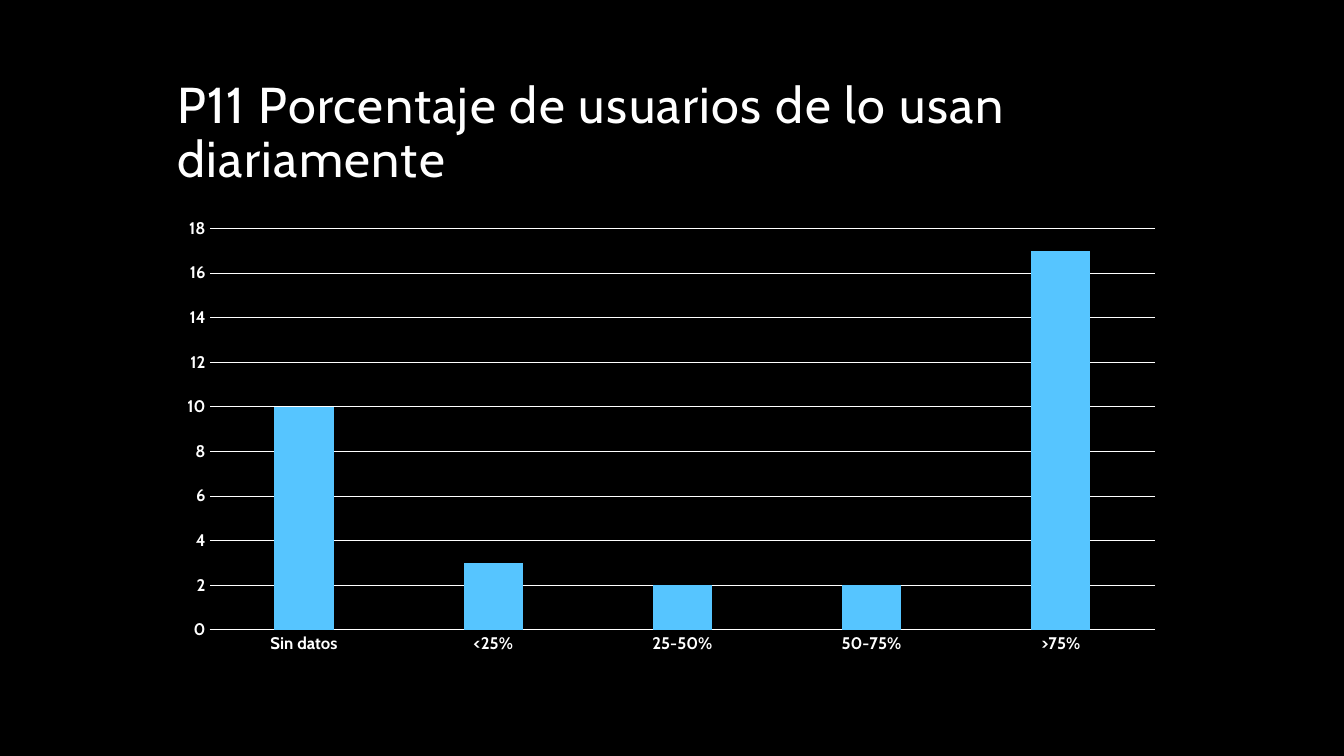
import pptx
import pptx.chart.data
import pptx.dml.color
import pptx.enum.chart
import pptx.enum.text
import pptx.util

WIDE, HIGH = pptx.util.Inches(13.33), pptx.util.Inches(7.5)
FACE = "Cabin"
COLORS = {"back": "000000", "text": "FFFFFF", "bar": "56C5FF"}
USAGE = {"Sin datos": 10, "<25%": 3, "25-50%": 2, "50-75%": 2, ">75%": 17}


def tint(name):
    return pptx.dml.color.RGBColor.from_string(COLORS[name])


def paint(fill, name):
    fill.solid()
    fill.fore_color.rgb = tint(name)


def style(font, size, bold=False):
    font.name = FACE
    font.size = pptx.util.Pt(size)
    font.bold = bold
    font.color.rgb = tint("text")


def rule(line):
    line.color.rgb = tint("text")
    line.width = pptx.util.Pt(0.75)


def place(left, top, width, height):
    return (int(left * WIDE), int(top * HIGH),
            int(width * WIDE), int(height * HIGH))


def add_title(slide, box):
    frame = slide.shapes.add_textbox(*box).text_frame
    frame.word_wrap = True
    frame.vertical_anchor = pptx.enum.text.MSO_ANCHOR.BOTTOM
    frame.text = "P11 Porcentaje de usuarios de lo usan diariamente"
    line = frame.paragraphs[0]
    line.line_spacing = 0.9
    run = line.runs[0]
    style(run.font, 36)
    run._r.get_or_add_rPr().set("spc", "100")


def add_bars(slide, box):
    data = pptx.chart.data.CategoryChartData(number_format="0")
    data.categories = list(USAGE)
    data.add_series("Series 1", list(USAGE.values()))
    kind = pptx.enum.chart.XL_CHART_TYPE.COLUMN_CLUSTERED
    chart = slide.shapes.add_chart(kind, *box, data).chart
    style(chart.font, 10)
    chart.has_title = False
    chart.has_legend = False

    plot = chart.plots[0]
    plot.gap_width = 219
    plot.overlap = -27
    plot.vary_by_categories = False
    paint(plot.series[0].format.fill, "bar")

    for axis in (chart.category_axis, chart.value_axis):
        style(axis.tick_labels.font, 12, bold=True)
        axis.major_tick_mark = pptx.enum.chart.XL_TICK_MARK.NONE
        axis.minor_tick_mark = pptx.enum.chart.XL_TICK_MARK.NONE
    rule(chart.category_axis.format.line)

    scale = chart.value_axis
    scale.minimum_scale, scale.maximum_scale, scale.major_unit = 0, 18, 2
    scale.tick_labels.number_format = "0"
    scale.tick_labels.number_format_is_linked = False
    scale.format.line.fill.background()
    scale.has_major_gridlines = True
    rule(scale.major_gridlines.format.line)


def main():
    deck = pptx.Presentation()
    deck.slide_width, deck.slide_height = WIDE, HIGH
    slide = deck.slides.add_slide(deck.slide_layouts[6])
    paint(slide.background.fill, "back")
    add_title(slide, place(0.1245, 0.056, 0.75, 0.2))
    add_bars(slide, place(0.1245, 0.277, 0.75, 0.6))
    deck.save("out.pptx")


if __name__ == "__main__":
    main()
